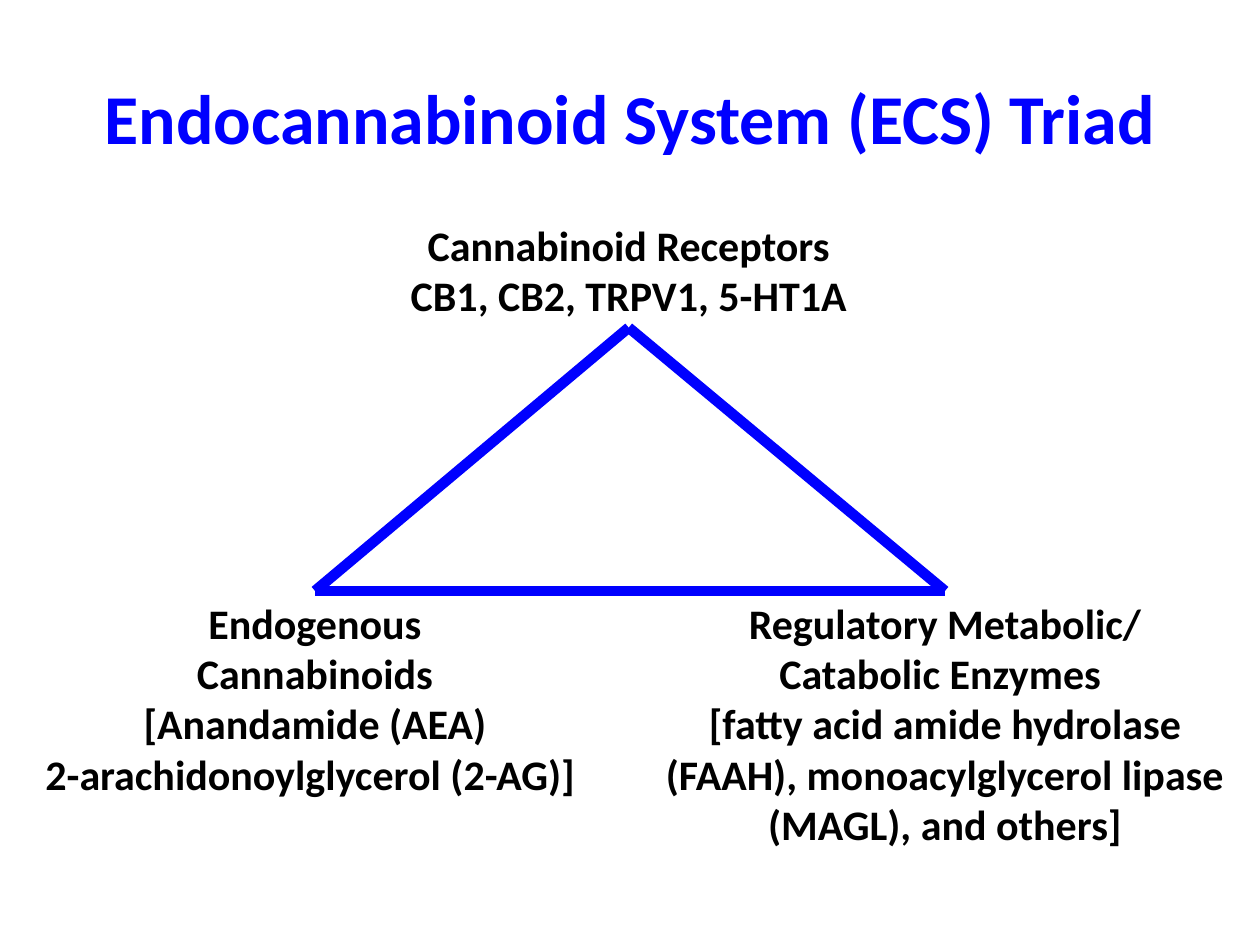
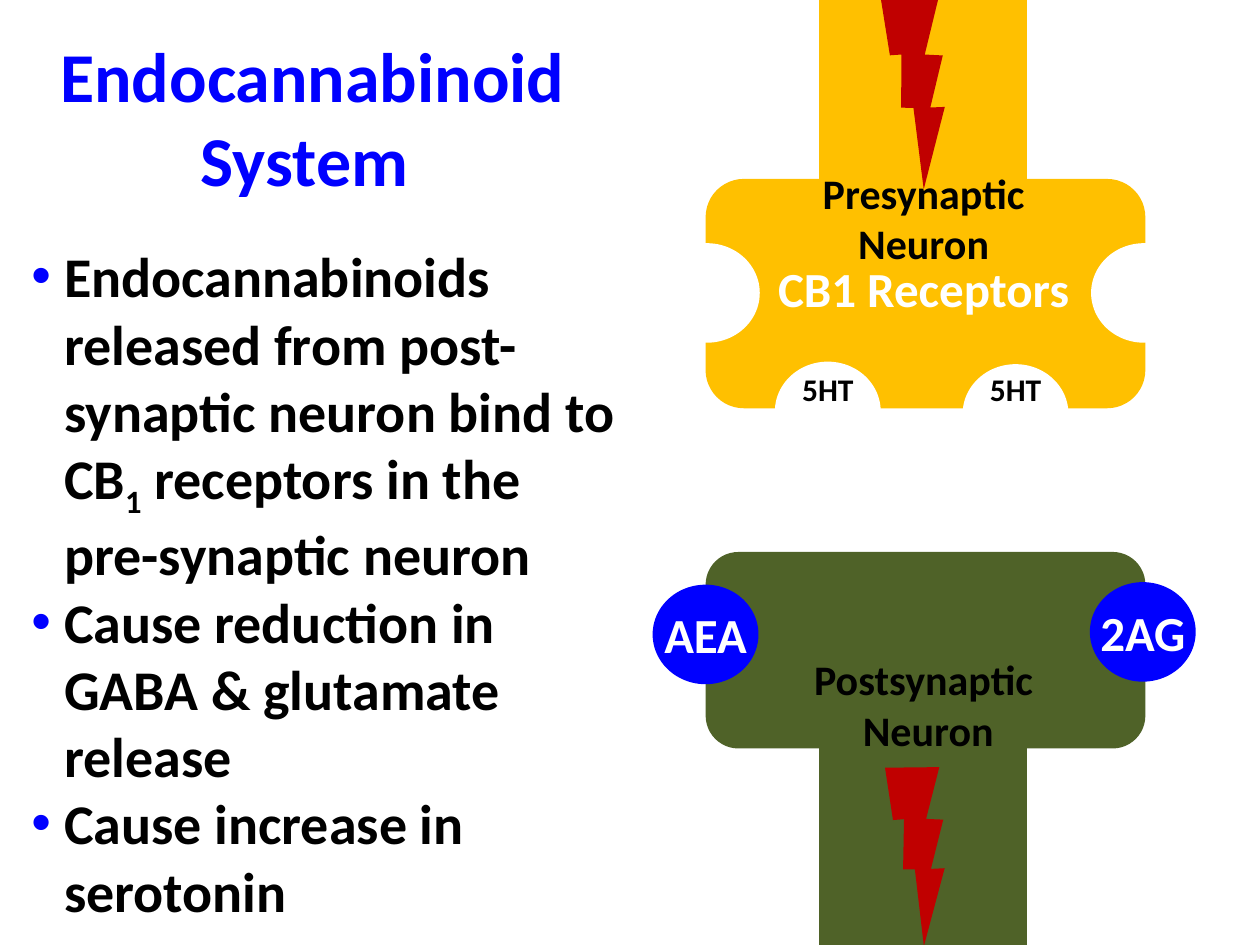
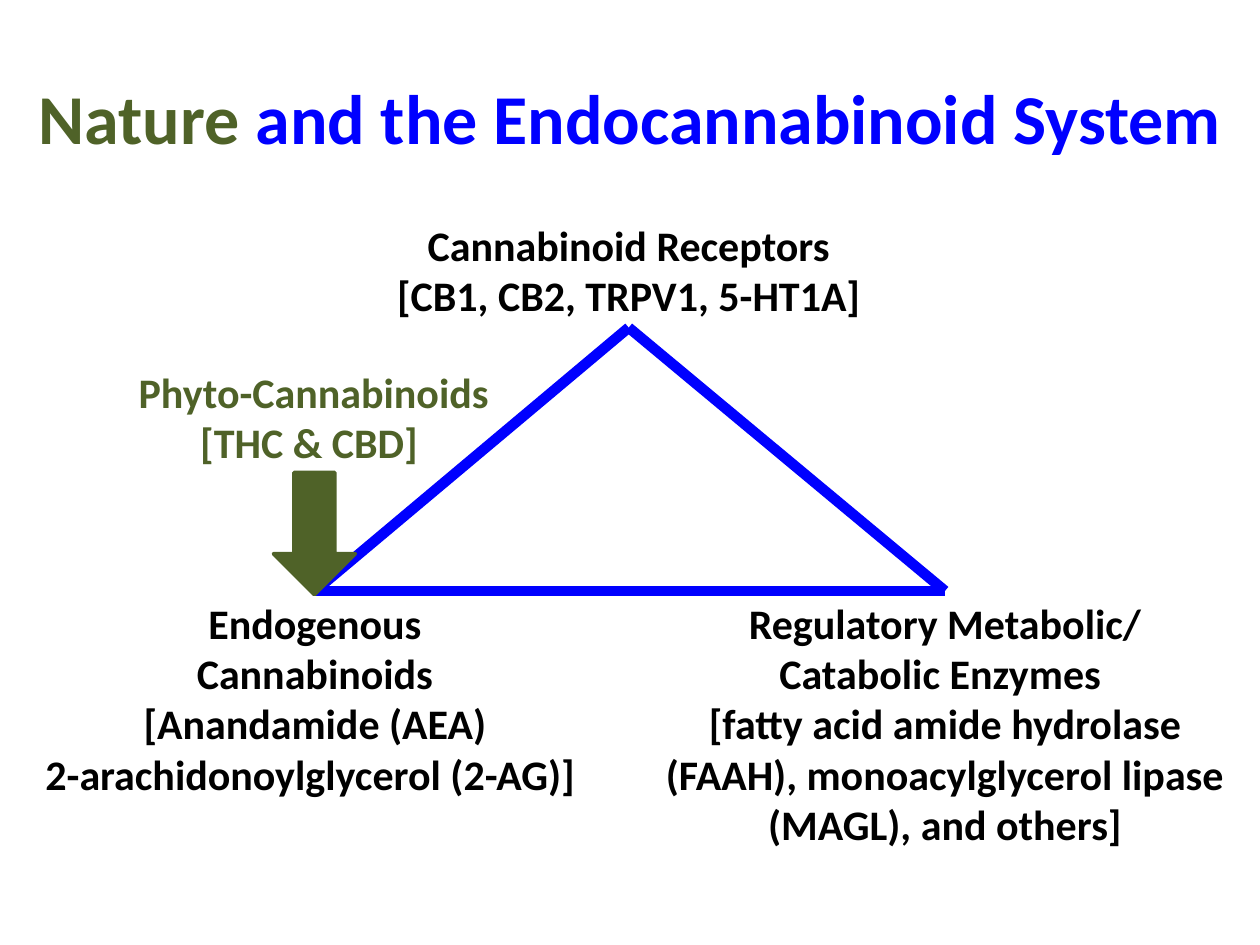
from lxml import etree
from pptx import Presentation
from pptx.dml.color import RGBColor
from pptx.enum.shapes import MSO_CONNECTOR, MSO_SHAPE
from pptx.enum.text import MSO_ANCHOR, PP_ALIGN
from pptx.oxml.ns import qn
from pptx.util import Inches, Pt

CENTER, LEFT = PP_ALIGN.CENTER, PP_ALIGN.LEFT
TOP, MIDDLE = MSO_ANCHOR.TOP, MSO_ANCHOR.MIDDLE
STRAIGHT = MSO_CONNECTOR.STRAIGHT
RECTANGLE, ROUNDED = MSO_SHAPE.RECTANGLE, MSO_SHAPE.ROUNDED_RECTANGLE
OVAL, BOLT, DOWN_ARROW = MSO_SHAPE.OVAL, MSO_SHAPE.LIGHTNING_BOLT, MSO_SHAPE.DOWN_ARROW

FONT = "Calibri"
BLUE, GREEN, AMBER, RED = "0000FF", "4F6228", "FFC000", "C00000"
BLACK, WHITE = "000000", "FFFFFF"
TITLE_SIZE, BULLET_SIZE, BADGE_SIZE, LABEL_SIZE, SMALL_SIZE = 40, 32, 28, 24, 18

# Content: triads
TRIAD_TITLE = [("Endocannabinoid System (ECS) Triad", BLUE)]
NATURE_TITLE = [("Nature", GREEN), (" and the Endocannabinoid System", BLUE)]
RECEPTORS = "CB1, CB2, TRPV1, 5-HT1A"
ENDOGENOUS = ["Endogenous", "Cannabinoids", "[Anandamide (AEA)",
              "2-arachidonoylglycerol (2-AG)] "]
ENZYMES = ["Regulatory Metabolic/", "Catabolic Enzymes ",
           "[fatty acid amide hydrolase (FAAH), monoacylglycerol lipase (MAGL), and others]"]
PHYTO = ["Phyto-Cannabinoids", "[THC & CBD] "]
APEX, LEFT_CORNER, RIGHT_CORNER = (4.99, 2.6), (2.5, 4.69), (7.5, 4.69)

# Content: synapse
SYNAPSE_TITLE = "Endocannabinoid System "
# Each bullet is a list of (text, is subscript)
BULLETS = [
    [("Endocannabinoids released from post-synaptic neuron bind to CB", False),
     ("1", True), ("\u00a0receptors in the pre-synaptic neuron", False)],
    [("Cause reduction in GABA & glutamate release", False)],
    [("Cause increase in serotonin", False)],
]
SOCKET = (0.84, 0.79)
CB1_SOCKETS = [(5.19, 1.93), (8.66, 1.93)]
SEROTONIN_SOCKETS = [(6.15, 2.87), (7.64, 2.89)]
# name, circle left, circle top, text width
LIGANDS = [("AEA", 5.18, 4.64, 0.87), ("2AG", 8.65, 4.62, 0.89)]
BOLTS = [(6.84, -0.07, 0.95, 1.43), (6.87, 6.03, 0.91, 1.34)]


def color(value):
    return RGBColor.from_string(value)


def add_span(para, text, size, ink):
    span = para.add_run()
    span.text = text
    span.font.name, span.font.size, span.font.bold = FONT, Pt(size), True
    span.font.color.rgb = color(ink)
    return span


def add_box(shapes, at, wrap=True, anchor=TOP):
    frame = shapes.add_textbox(*map(Inches, at)).text_frame
    frame.word_wrap = wrap
    frame.vertical_anchor = anchor
    return frame


def next_para(frame, index, align):
    para = frame.add_paragraph() if index else frame.paragraphs[0]
    para.alignment = align
    return para


def add_label(shapes, lines, at, size=LABEL_SIZE, ink=BLACK, wrap=True):
    frame = add_box(shapes, at, wrap)
    for index, line in enumerate(lines):
        add_span(next_para(frame, index, CENTER), line, size, ink)


def add_block(shapes, kind, at, fill):
    block = shapes.add_shape(kind, *map(Inches, at))
    block.shadow.inherit = False
    block.fill.solid()
    block.fill.fore_color.rgb = color(fill)
    block.line.fill.background()
    return block


def add_side(page, start, end):
    side = page.shapes.add_connector(STRAIGHT, *map(Inches, start + end))
    side.line.color.rgb = color(BLUE)
    side.line.width = Pt(6)
    etree.SubElement(side._element.spPr, qn("a:effectLst"))


def add_bullet_mark(para):
    properties = para._p.get_or_add_pPr()
    properties.set("marL", str(Inches(0.26)))
    properties.set("indent", str(-Inches(0.26)))
    mark_color = etree.SubElement(properties, qn("a:buClr"))
    etree.SubElement(mark_color, qn("a:srgbClr"), val=BLUE)
    etree.SubElement(properties, qn("a:buFont"), typeface="Arial")
    etree.SubElement(properties, qn("a:buChar"), char="•")


def add_page(deck):
    page = deck.slides.add_slide(deck.slide_layouts[6])
    page.background.fill.solid()
    page.background.fill.fore_color.rgb = color(WHITE)
    return page


def add_triad(deck, title, title_left, receptors):
    page = add_page(deck)
    frame = add_box(page.shapes, (title_left, 0.3, 10 - 2 * title_left, 1.25), anchor=MIDDLE)
    para = next_para(frame, 0, CENTER)
    for text, ink in title:
        add_span(para, text, TITLE_SIZE, ink)
    # Corner labels
    add_label(page.shapes, ["Cannabinoid Receptors", receptors], (3.04, 1.69, 3.9, 0.91), wrap=False)
    add_label(page.shapes, ENDOGENOUS, (0, 4.69, 5, 1.72))
    add_label(page.shapes, ENZYMES, (5, 4.69, 5, 2.12))
    # Triangle
    for start, end in [(LEFT_CORNER, APEX), (LEFT_CORNER, RIGHT_CORNER), (RIGHT_CORNER, APEX)]:
        add_side(page, start, end)
    return page


def add_synapse(deck):
    shapes = add_page(deck).shapes
    # Presynaptic terminal with its receptor sockets
    add_block(shapes, ROUNDED, (5.6, 1.42, 3.49, 1.82), AMBER)
    for corner in CB1_SOCKETS + SEROTONIN_SOCKETS:
        add_block(shapes, OVAL, corner + SOCKET, WHITE)
    add_label(shapes, ["CB1 Receptors"], (6.06, 2, 2.54, 0.57), BADGE_SIZE, WHITE, False)
    for left, _ in SEROTONIN_SOCKETS:
        add_label(shapes, ["5HT"], (left + 0.115, 2.89, 0.61, 0.4), SMALL_SIZE, wrap=False)
    # Postsynaptic terminal and both axons
    add_block(shapes, ROUNDED, (5.6, 4.38, 3.49, 1.56), GREEN).rotation = 180
    add_block(shapes, RECTANGLE, (6.5, 5.3, 1.65, 2.2), GREEN)
    add_block(shapes, RECTANGLE, (6.5, 0, 1.65, 1.52), AMBER)
    add_label(shapes, ["Postsynaptic", " Neuron"], (6.35, 5.14, 1.96, 0.91), wrap=False)
    add_label(shapes, ["Presynaptic", "Neuron"], (6.42, 1.28, 1.82, 0.91), wrap=False)
    # Ligands
    for name, left, top, width in LIGANDS:
        group = shapes.add_group_shape().shapes
        add_block(group, OVAL, (left, top) + SOCKET, BLUE)
        text_left = left + (SOCKET[0] - width) / 2
        add_label(group, [name], (text_left, top + 0.11, width, 0.57), BADGE_SIZE, WHITE, False)
    # Nerve impulses
    for at in BOLTS:
        bolt = add_block(shapes, BOLT, at, RED)
        bolt.rotation = 325.3
        bolt._element.spPr.find(qn("a:xfrm")).set("flipH", "1")
    # Title and bullets
    add_label(shapes, [SYNAPSE_TITLE], (-0.04, 0.21, 5.04, 1.45), TITLE_SIZE, BLUE)
    frame = add_box(shapes, (0.15, 1.87, 4.85, 5.49))
    for index, bullet in enumerate(BULLETS):
        para = next_para(frame, index, LEFT)
        add_bullet_mark(para)
        for text, is_subscript in bullet:
            span = add_span(para, text, BULLET_SIZE, BLACK)
            if is_subscript:
                span._r.get_or_add_rPr().set("baseline", "-25000")


def add_nature(deck):
    page = add_triad(deck, NATURE_TITLE, 0, f"[{RECEPTORS}]")
    add_label(page.shapes, PHYTO, (0.84, 2.86, 3.3, 0.91), ink=GREEN)
    arrow = add_block(page.shapes, DOWN_ARROW, (2.17, 3.75, 0.65, 0.97), GREEN)
    arrow.line.color.rgb = color(GREEN)
    arrow.line.width = Pt(2)


def main():
    deck = Presentation()
    deck.slide_width, deck.slide_height = Inches(10), Inches(7.5)
    add_triad(deck, TRIAD_TITLE, 0.5, RECEPTORS)
    add_synapse(deck)
    add_nature(deck)
    deck.save("out.pptx")


if __name__ == "__main__":
    main()
